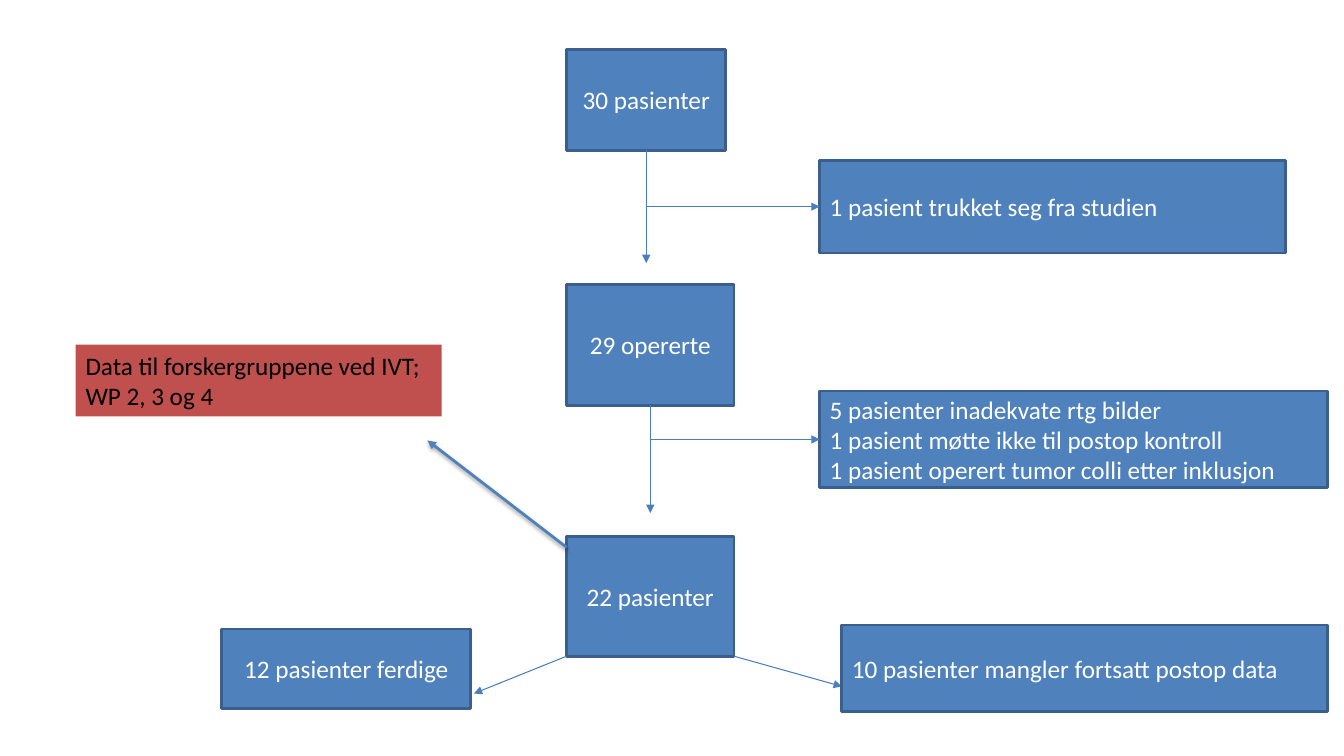
from lxml.etree import SubElement as Sub
from pptx import Presentation
from pptx.dml.color import RGBColor as RGB
from pptx.enum.shapes import MSO_CONNECTOR as Link, MSO_SHAPE as Form
from pptx.enum.text import MSO_ANCHOR as Anchor, PP_ALIGN as Align
from pptx.oxml.ns import qn
from pptx.util import Pt

PX = 9144
BLUE = RGB(0x4F, 0x81, 0xBD)
EDGE = RGB(0x3A, 0x5F, 0x8C)
THIN = RGB(0x4B, 0x7E, 0xBC)
RED = RGB(0xC0, 0x50, 0x4D)
WHITE = RGB(255, 255, 255)
BLACK = RGB(0, 0, 0)
TOP, LEFT, BOTTOM = 0, 1, 2


def card(slide, box, text, align=Align.CENTER, fill=BLUE, edge=EDGE, ink=WHITE):
    """Draw a filled box with one paragraph per line of text."""
    shape = slide.shapes.add_shape(Form.RECTANGLE, *(n * PX for n in box))
    shape.shadow.inherit = False
    shape.fill.solid()
    shape.fill.fore_color.rgb = fill
    if edge is None:
        shape.line.fill.background()
    else:
        shape.line.color.rgb = edge
        shape.line.width = Pt(2)
    frame = shape.text_frame
    frame.word_wrap = True
    frame.vertical_anchor = Anchor.MIDDLE
    frame.text = text
    for para in frame.paragraphs:
        para.alignment = align
        for name, value in {"name": "Calibri", "size": Pt(18)}.items():
            setattr(para.font, name, value)
        para.font.color.rgb = ink
    return shape


def arrow(slide, start, end, color=THIN, width=0.75, shade=False):
    """Draw a straight arrow between two points."""
    line = slide.shapes.add_connector(
        Link.STRAIGHT, *(n * PX for n in (*start, *end)))
    line.line.color.rgb = color
    line.line.width = Pt(width)
    props = line.element.spPr
    Sub(props.find(qn("a:ln")), qn("a:tailEnd"), type="triangle")
    effects = Sub(props, qn("a:effectLst"))
    if shade:
        shadow = Sub(effects, qn("a:outerShdw"), blurRad="40000",
                     dist="20000", dir="5400000", rotWithShape="0")
        tint = Sub(shadow, qn("a:srgbClr"), val="000000")
        Sub(tint, qn("a:alpha"), val="38000")
    return line


def stage(slide, box, text, drop, side, loss):
    """Draw a study stage, its arrow down and the patients lost beside it."""
    x, y, w, h = box
    left, top, wide, high = side
    mid, base = x + w // 2, y + h
    branch = y + top + high // 2
    main = card(slide, box, text)
    down = arrow(slide, (mid, base), (mid, base + drop))
    down.begin_connect(main, BOTTOM)
    lost = card(slide, (x + left, y + top, wide, high), loss, Align.LEFT)
    out = arrow(slide, (mid, branch), (x + left, branch))
    out.end_connect(lost, LEFT)


def result(slide, box):
    """Draw the last stage with its two outcomes and the data handed on."""
    x, y, w, h = box
    base = y + h
    card(slide, box, "22 pasienter")
    arrow(slide, (x + w, base), (x + 273, base + 30))
    arrow(slide, (x, base), (x - 92, base + 37))
    card(slide, (x + 273, y + 88, 482, 86),
         "10 pasienter mangler fortsatt postop data", Align.LEFT)
    card(slide, (x - 342, y + 92, 247, 79), "12 pasienter ferdige")
    arrow(slide, (x, y + 11), (x - 138, y - 95), BLUE, 2, True)
    card(slide, (x - 487, y - 190, 363, 71),
         "Data til forskergruppene ved IVT; WP 2, 3 og 4",
         Align.LEFT, RED, None, BLACK)


def main():
    """Build the patient flow slide and save it."""
    deck = Presentation()
    deck.slide_width, deck.slide_height = 1333 * PX, 750 * PX
    slide = deck.slides.add_slide(deck.slide_layouts[6])
    stage(slide, (562, 49, 158, 100), "30 pasienter", 112,
          (251, 110, 462, 92), "1 pasient trukket seg fra studien")
    stage(slide, (562, 282, 166, 120), "29 opererte", 107,
          (251, 106, 504, 96),
          "5 pasienter inadekvate rtg bilder\n"
          "1 pasient møtte ikke til postop kontroll\n"
          "1 pasient operert tumor colli etter inklusjon")
    result(slide, (562, 532, 166, 119))
    deck.save("out.pptx")


if __name__ == "__main__":
    main()
